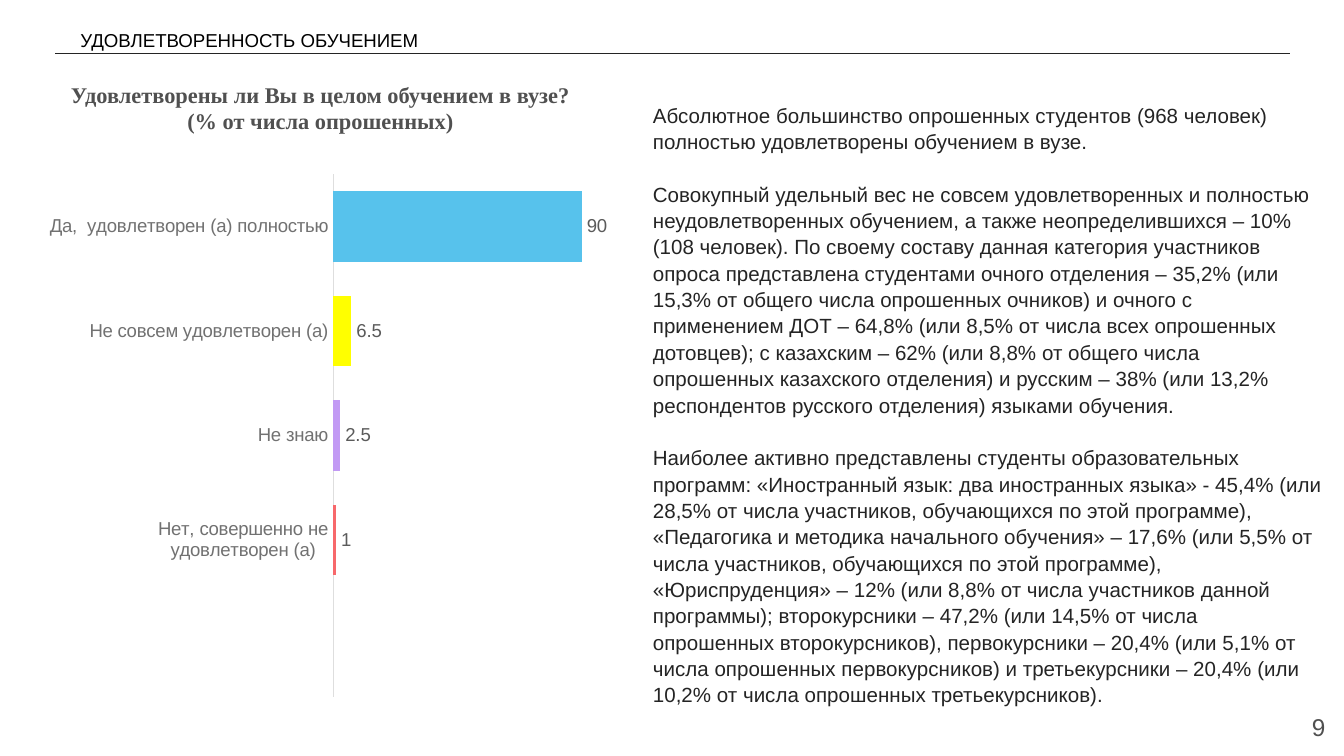
from collections import namedtuple

from lxml.etree import SubElement
from pptx import Presentation
from pptx.chart.data import CategoryChartData
from pptx.dml.color import RGBColor
from pptx.enum.chart import XL_CHART_TYPE, XL_LABEL_POSITION, XL_TICK_LABEL_POSITION, XL_TICK_MARK
from pptx.enum.shapes import MSO_CONNECTOR
from pptx.enum.text import MSO_ANCHOR, PP_ALIGN
from pptx.oxml import parse_xml
from pptx.oxml.ns import nsdecls, qn
from pptx.util import Inches, Pt

BLACK = RGBColor(0x00, 0x00, 0x00)
INK = RGBColor(0x24, 0x24, 0x24)
GREY = RGBColor(0x50, 0x50, 0x50)
MARK = RGBColor(0x5B, 0x5B, 0x5B)
MUTED = RGBColor(0x71, 0x71, 0x71)
PALE = RGBColor(0xDE, 0xDE, 0xDE)
RED = RGBColor(0xF7, 0x68, 0x6B)
LILAC = RGBColor(0xC2, 0x9A, 0xF4)
YELLOW = RGBColor(0xFF, 0xFF, 0x00)
BLUE = RGBColor(0x57, 0xC2, 0xEC)

Box = namedtuple("Box", "left top width height")
PAGE = Box(0, 0, Inches(10), Inches(10) * 9 // 16)

BARS = [
    ("", None, None),
    ("Нет, совершенно не удовлетворен (а)", 1, RED),
    ("Не знаю", 2.5, LILAC),
    ("Не совсем удовлетворен (а)", 6.5, YELLOW),
    ("Да,  удовлетворен (а) полностью", 90, BLUE),
]
ASK = ["Удовлетворены ли Вы в целом обучением в вузе?", "(% от числа опрошенных)"]
STORY = [
    "Абсолютное большинство опрошенных студентов (968 человек) полностью "
    "удовлетворены обучением в вузе.",
    "Совокупный удельный вес не совсем удовлетворенных и полностью "
    "неудовлетворенных обучением, а также неопределившихся – 10% (108 человек). "
    "По своему составу данная категория участников опроса представлена студентами "
    "очного отделения – 35,2% (или 15,3% от общего числа опрошенных очников) и "
    "очного с применением ДОТ – 64,8% (или 8,5% от числа всех опрошенных дотовцев); "
    "с казахским – 62% (или 8,8% от общего числа опрошенных казахского отделения) "
    "и русским – 38% (или 13,2% респондентов русского отделения) языками обучения.",
    "Наиболее активно представлены студенты образовательных программ: "
    "«Иностранный язык: два иностранных языка» - 45,4% (или 28,5% от числа "
    "участников, обучающихся по этой программе),",
    "«Педагогика и методика начального обучения» – 17,6% (или 5,5% от числа "
    "участников, обучающихся по этой программе), «Юриспруденция» – 12% (или 8,8% "
    "от числа участников данной программы); второкурсники – 47,2% (или 14,5% от "
    "числа опрошенных второкурсников), первокурсники – 20,4% (или 5,1% от числа "
    "опрошенных первокурсников) и третьекурсники – 20,4% (или 10,2% от числа "
    "опрошенных третьекурсников).",
]


def part(box, x, y, w, h):
    """Return the part of a box given in percent of its size."""
    return Box(
        round(box.left + box.width * x / 100),
        round(box.top + box.height * y / 100),
        round(box.width * w / 100),
        round(box.height * h / 100),
    )


def style(font, size, color, face="Arial", bold=False):
    """Set the look of a font."""
    font.size, font.name, font.bold = Pt(size), face, bold
    font.color.rgb = color


def write(slide, box, lines, size=10, color=INK, face="Arial", bold=False,
          align=PP_ALIGN.LEFT, anchor=MSO_ANCHOR.TOP, inset=0.1, lead=1.0, gaps=()):
    """Write paragraphs into a text box, with a gap after those listed."""
    frame = slide.shapes.add_textbox(*box).text_frame
    frame.word_wrap = True
    frame.vertical_anchor = anchor
    frame.margin_left = frame.margin_right = Inches(0.1)
    frame.margin_top = frame.margin_bottom = Inches(inset)
    for i, line in enumerate(lines):
        para = frame.paragraphs[0] if i == 0 else frame.add_paragraph()
        para.alignment, para.line_spacing = align, lead
        para.space_after = Pt(14.14 if i in gaps else 0)
        run = para.add_run()
        run.text = line
        style(run.font, size, color, face, bold)


def head(slide, box):
    """Place the heading and the rule under it."""
    write(slide, part(box, 0.98, 0, 39.5, 100), ["УДОВЛЕТВОРЕННОСТЬ ОБУЧЕНИЕМ"],
          color=BLACK, anchor=MSO_ANCHOR.BOTTOM, inset=0.06)
    rule = part(box, 0, 90.91, 100, 0)
    line = slide.shapes.add_connector(
        MSO_CONNECTOR.STRAIGHT, rule.left, rule.top, rule.left + rule.width, rule.top)
    line.line.color.rgb = INK
    line.line.width = Pt(0.75)
    SubElement(line.element.spPr, qn("a:effectLst"))


def fix_plot(chart, *shares):
    """Fix the inner plot area at percent shares of the chart."""
    area = chart.element.find(".//" + qn("c:plotArea"))
    for old in area.findall(qn("c:layout")):
        area.remove(old)
    sizes = "".join(f'<c:{k} val="{v / 100}"/>' for k, v in zip("xywh", shares))
    area.insert(0, parse_xml(
        f'<c:layout {nsdecls("c")}><c:manualLayout><c:layoutTarget val="inner"/>'
        f'<c:xMode val="edge"/><c:yMode val="edge"/>{sizes}'
        '</c:manualLayout></c:layout>'))


def poll(slide, box):
    """Place the question and the bar chart of its answers."""
    write(slide, part(box, 0, 0, 94.38, 12.87), ASK, size=12, color=GREY, inset=0.09,
          face="Times New Roman", bold=True, align=PP_ALIGN.CENTER)
    data = CategoryChartData()
    data.categories = [name for name, _, _ in BARS]
    data.add_series("Series 1", [value for _, value, _ in BARS])
    chart = slide.shapes.add_chart(
        XL_CHART_TYPE.BAR_CLUSTERED, *part(box, 0, 15.61, 100, 84.39), data).chart
    chart.has_legend = chart.has_title = False
    style(chart.font, 10, INK)
    fix_plot(chart, 49.1, 1.1, 48.4, 97.2)

    cats, vals = chart.category_axis, chart.value_axis
    cats.major_tick_mark = cats.minor_tick_mark = XL_TICK_MARK.NONE
    cats.tick_label_position = XL_TICK_LABEL_POSITION.NEXT_TO_AXIS
    cats.format.line.color.rgb = PALE
    cats.format.line.width = Pt(0.75)
    style(cats.tick_labels.font, 10, MUTED)
    vals.minimum_scale, vals.maximum_scale = 0, 100
    vals.major_tick_mark = vals.minor_tick_mark = XL_TICK_MARK.NONE
    vals.has_major_gridlines = vals.visible = False

    plot = chart.plots[0]
    plot.gap_width, plot.vary_by_categories = 48, False
    plot.has_data_labels = True
    labels = plot.data_labels
    labels.show_value = True
    labels.position = XL_LABEL_POSITION.OUTSIDE_END
    style(labels.font, 10, MARK)
    for i, (_, _, color) in enumerate(BARS):
        if color:
            fill = plot.series[0].points[i].format.fill
            fill.solid()
            fill.fore_color.rgb = color


def story(slide, box):
    """Place the comment on the answers."""
    write(slide, box, STORY, size=11, lead=1.07, gaps=(0, 1))


def folio(slide, box):
    """Place the page number."""
    write(slide, box, ["9"], size=13, color=GREY, align=PP_ALIGN.RIGHT,
          anchor=MSO_ANCHOR.MIDDLE)


def main():
    """Build the slide and save it."""
    deck = Presentation()
    deck.slide_width, deck.slide_height = PAGE.width, PAGE.height
    slide = deck.slides.add_slide(deck.slide_layouts[6])
    head(slide, part(PAGE, 4.1, 0, 91.9, 7.83))
    folio(slide, part(PAGE, 93.6, 92.35, 6, 7.65))
    story(slide, part(PAGE, 47.6, 11.57, 52, 85.41))
    poll(slide, part(PAGE, 3.7, 9.07, 42.7, 84.34))
    deck.save("out.pptx")


if __name__ == "__main__":
    main()
